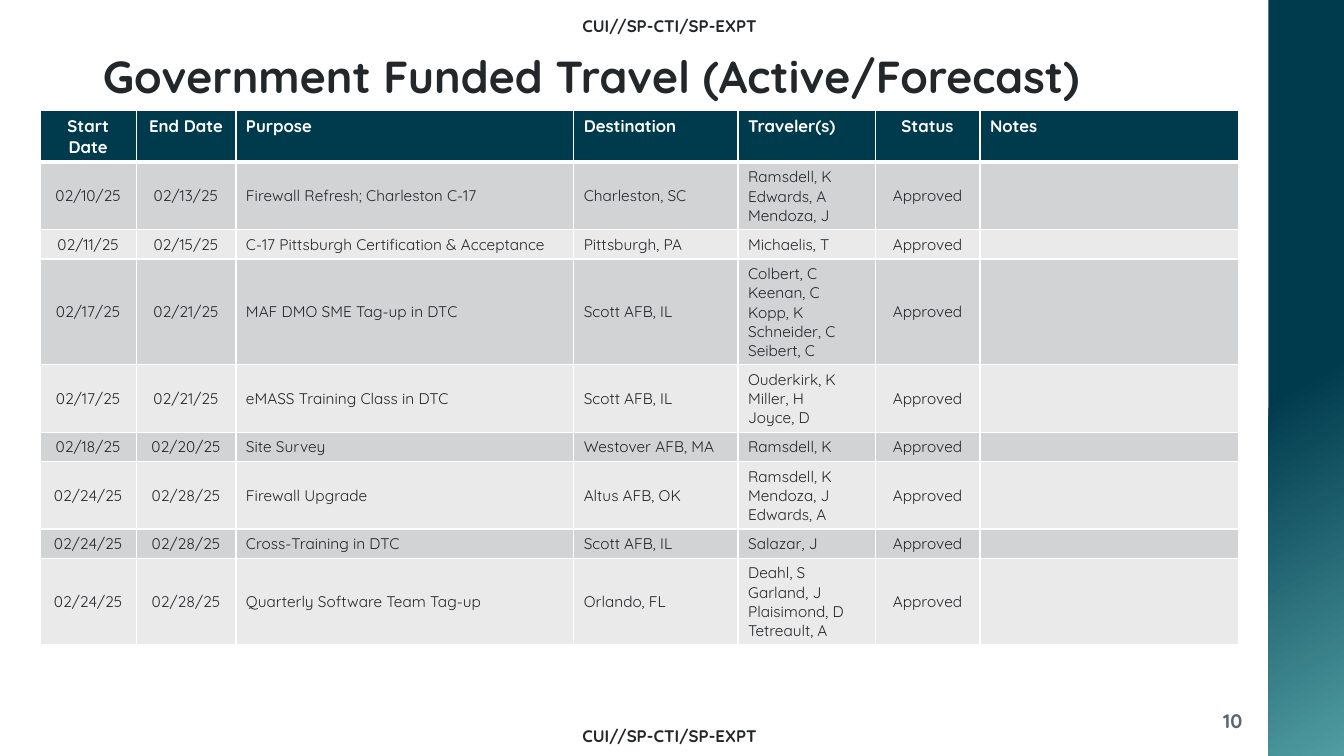
import pptx
import pptx.util
import pptx.dml.color
import pptx.enum.shapes
import pptx.enum.text
import pptx.oxml
import pptx.oxml.ns

Inches = pptx.util.Inches
Align = pptx.enum.text.PP_ALIGN
Anchor = pptx.enum.text.MSO_ANCHOR

COLORS = {
    "ink": "24272A",
    "teal": "003B4D",
    "aqua": "509CA2",
    "slate": "5B6670",
    "white": "FFFFFF",
    "dark_band": "D2D3D5",
    "light_band": "EAEAEB",
}
FONT = "Quicksand"
MARKING = "CUI//SP-CTI/SP-EXPT "
COLUMNS = [
    ("Start Date", 0.95, Align.CENTER),
    ("End Date", 0.99, Align.CENTER),
    ("Purpose", 3.35, Align.LEFT),
    ("Destination", 1.63, Align.LEFT),
    ("Traveler(s)", 1.36, Align.LEFT),
    ("Status", 1.04, Align.CENTER),
    ("Notes", 2.57, Align.LEFT),
]
TRIPS = [
    ("02/10/25", "02/13/25", "Firewall Refresh; Charleston C-17", "Charleston, SC",
     ["Ramsdell, K", "Edwards, A", "Mendoza, J"]),
    ("02/11/25", "02/15/25", "C-17 Pittsburgh Certification & Acceptance", "Pittsburgh, PA",
     ["Michaelis, T"]),
    ("02/17/25", "02/21/25", "MAF DMO SME Tag-up in DTC", "Scott AFB, IL",
     ["Colbert, C", "Keenan, C", "Kopp, K", "Schneider, C", "Seibert, C"]),
    ("02/17/25", "02/21/25", "eMASS Training Class in DTC", "Scott AFB, IL",
     ["Ouderkirk, K", "Miller, H", "Joyce, D"]),
    ("02/18/25", "02/20/25", "Site Survey", "Westover AFB, MA",
     ["Ramsdell, K"]),
    ("02/24/25", "02/28/25", "Firewall Upgrade", "Altus AFB, OK",
     ["Ramsdell, K", "Mendoza, J", "Edwards, A"]),
    ("02/24/25", "02/28/25", "Cross-Training in DTC", "Scott AFB, IL",
     ["Salazar, J"]),
    ("02/24/25", "02/28/25", "Quarterly Software Team Tag-up", "Orlando, FL",
     ["Deahl, S", "Garland, J", "Plaisimond, D", "Tetreault, A"]),
]


def rgb(name):
    return pptx.dml.color.RGBColor.from_string(COLORS[name])


def write_text(frame, text, size=11, color="ink", bold=False, align=Align.LEFT, spacing=None):
    frame.word_wrap = True
    lines = [text] if isinstance(text, str) else text
    for index, line in enumerate(lines):
        para = frame.paragraphs[0] if index == 0 else frame.add_paragraph()
        para.alignment = align
        if spacing:
            para.line_spacing = spacing
        if not line:
            end = pptx.oxml.parse_xml(
                f'<a:endParaRPr {pptx.oxml.ns.nsdecls("a")} sz="{size * 100}"/>')
            para._p.append(end)
            continue
        span = para.add_run()
        span.text = line
        span.font.name = FONT
        span.font.size = pptx.util.Pt(size)
        span.font.bold = bold
        span.font.color.rgb = rgb(color)


def add_label(page, box, text, anchor=Anchor.TOP, **style):
    frame = page.shapes.add_textbox(*map(Inches, box)).text_frame
    frame.vertical_anchor = anchor
    write_text(frame, text, bold=True, **style)


def add_side_band(page, box):
    band = page.shapes.add_shape(
        pptx.enum.shapes.MSO_SHAPE.RECTANGLE, *map(Inches, box))
    band.shadow.inherit = False
    band.line.fill.background()
    band.fill.gradient()
    band.fill.gradient_angle = 300
    for stop, position, color in zip(band.fill.gradient_stops, (0.5, 1), ("teal", "aqua")):
        stop.position = position
        stop.color.rgb = rgb(color)


def add_title(page, box, text):
    title = page.shapes.title
    title.left, title.top, title.width, title.height = map(Inches, box)
    frame = title.text_frame
    frame.auto_size = pptx.enum.text.MSO_AUTO_SIZE.NONE
    frame.vertical_anchor = Anchor.TOP
    write_text(frame, text, size=32, bold=True, spacing=0.9)


def format_cell(cell, fill, bottom=1):
    properties = cell._tc.get_or_add_tcPr()
    for side, width in (("L", 1), ("R", 1), ("T", 1), ("B", bottom)):
        properties.append(pptx.oxml.parse_xml(
            f'<a:ln{side} {pptx.oxml.ns.nsdecls("a")} w="{pptx.util.Pt(width)}">'
            f'<a:solidFill><a:srgbClr val="{COLORS["white"]}"/></a:solidFill></a:ln{side}>'))
    cell.fill.solid()
    cell.fill.fore_color.rgb = rgb(fill)


def add_travel_table(page, box):
    table = page.shapes.add_table(
        len(TRIPS) + 1, len(COLUMNS), *map(Inches, box)).table
    table.rows[0].height = Inches(0.51)
    for index, (heading, width, align) in enumerate(COLUMNS):
        table.columns[index].width = Inches(width)
        cell = table.cell(0, index)
        format_cell(cell, "teal", bottom=3)
        write_text(cell.text_frame, heading, size=12, color="white", bold=True, align=align)
    for number, trip in enumerate(TRIPS, 1):
        table.rows[number].height = Inches(0.1 + 0.19 * len(trip[-1]))
        fill = "dark_band" if number % 2 else "light_band"
        for index, value in enumerate((*trip, "Approved", "")):
            cell = table.cell(number, index)
            format_cell(cell, fill)
            cell.vertical_anchor = Anchor.MIDDLE
            write_text(cell.text_frame, value, align=COLUMNS[index][2])


def main():
    deck = pptx.Presentation()
    deck.slide_width, deck.slide_height = Inches(13.33), Inches(7.5)
    page = deck.slides.add_slide(deck.slide_layouts.get_by_name("Title Only"))
    add_side_band(page, (12.58, 0, 0.75, 7.5))
    for top in (0.11, 7.15):
        add_label(page, (2, top, 9.33, 0.24), MARKING, size=12, align=Align.CENTER)
    add_label(page, (11.5, 6.95, 0.92, 0.4), "10", anchor=Anchor.MIDDLE,
              size=14, color="slate", align=Align.RIGHT)
    add_title(page, (0.92, 0.49, 11.5, 0.96), "Government Funded Travel (Active/Forecast)")
    add_travel_table(page, (0.4, 1.1, 11.9, 5.33))
    deck.save("out.pptx")


if __name__ == "__main__":
    main()
